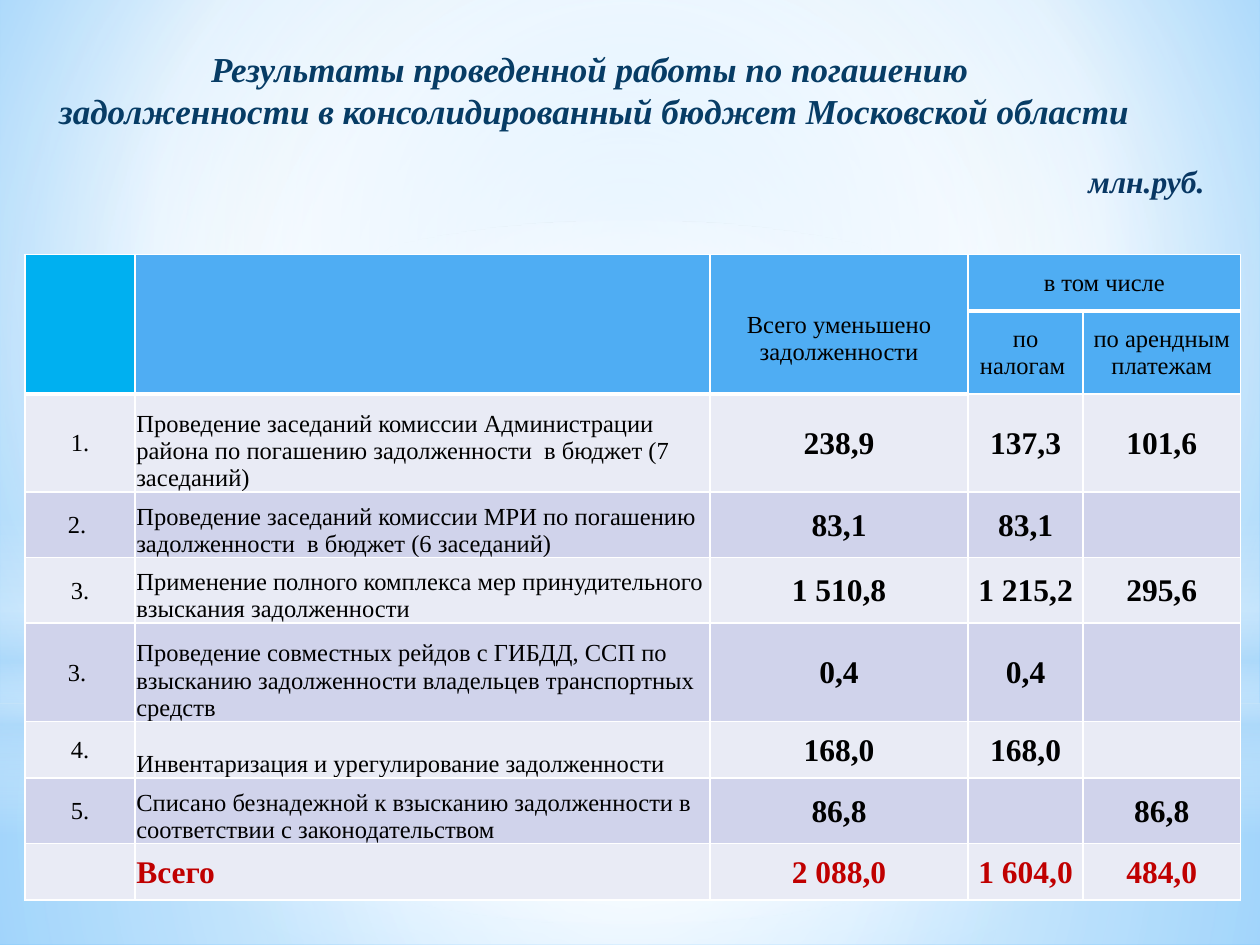
from lxml.etree import SubElement
from pptx import Presentation
from pptx.dml.color import RGBColor
from pptx.enum.shapes import MSO_SHAPE
from pptx.enum.text import MSO_ANCHOR, PP_ALIGN
from pptx.oxml.ns import qn
from pptx.util import Pt

COLORS = {
    "sky": "9ED5FF", "white": "FFFFFF", "blue": "5BB9FF", "haze": "B4DCFA",
    "corner": "00B0F0", "header": "4FADF3", "light": "E9EBF5", "dark": "D0D3EB",
    "black": "000000", "total": "C00000", "title": "073C65", "unit": "083763",
}
FONT = "Times New Roman"
SMALL = {"size": Pt(14), "bold": False}
LARGE = {"size": Pt(18), "bold": True}
COLUMN_WIDTHS = [62.8, 328.5, 147.6, 65.6, 90]
ROW_HEIGHTS = [32.4, 46.8, 56.2, 37.4, 37.4, 56.2, 32.4, 37.4, 32.4]
BODY_ROWS = [
    ["1.", "Проведение заседаний комиссии Администрации района по погашению "
     "задолженности  в бюджет (7 заседаний)", "238,9", "137,3", "101,6"],
    ["2. ", "Проведение заседаний комиссии МРИ по погашению "
     "задолженности  в бюджет (6 заседаний)", "83,1", "83,1", ""],
    ["3.", "Применение полного комплекса мер принудительного "
     "взыскания задолженности", "1 510,8", "1 215,2", "295,6"],
    ["3. ", "Проведение совместных рейдов с ГИБДД, ССП по взысканию "
     "задолженности владельцев транспортных средств", "0,4", "0,4", ""],
    ["4.", "Инвентаризация и урегулирование задолженности", "168,0", "168,0", ""],
    ["5.", "Списано безнадежной к взысканию задолженности в "
     "соответствии с законодательством", "86,8", "", "86,8"],
    ["", "Всего", "2 088,0", "1 604,0", "484,0"],
]


def color(name):
    return RGBColor.from_string(COLORS[name])


def paint_gradient(fill, element, stops, focus=None):
    """Circular gradient around focus, or a vertical one without it."""
    fill.gradient()
    gradient = next(element.iter(qn("a:gradFill")))
    for child in list(gradient):
        gradient.remove(child)
    stop_list = SubElement(gradient, qn("a:gsLst"))
    for position, name, opacity in stops:
        stop = SubElement(stop_list, qn("a:gs"), pos=str(position * 1000))
        tint = SubElement(stop, qn("a:srgbClr"), val=COLORS[name])
        if opacity < 100:
            SubElement(tint, qn("a:alpha"), val=str(opacity * 1000))
    if focus:
        circle = SubElement(gradient, qn("a:path"), path="circle")
        edges = {side: str(part * 1000) for side, part in zip("ltrb", focus)}
        SubElement(circle, qn("a:fillToRect"), **edges)
    else:
        SubElement(gradient, qn("a:lin"), ang="5400000", scaled="0")


def add_glow(page, kind, top, height, stops, focus=(50, 50, 50, 50)):
    glow = page.shapes.add_shape(kind, Pt(0), Pt(top), Pt(720), Pt(height))
    glow.shadow.inherit = False
    glow.line.fill.background()
    paint_gradient(glow.fill, glow._element, stops, focus)


def write_paragraph(para, text, color_name, font_format, align=PP_ALIGN.CENTER):
    para.alignment = align
    span = para.add_run()
    span.text = text
    span.font.color.rgb = color(color_name)
    for name, value in {"name": FONT, **font_format}.items():
        setattr(span.font, name, value)


def add_text(page, left, top, width, height, lines, color_name, size, align, wrap):
    box = page.shapes.add_textbox(Pt(left), Pt(top), Pt(width), Pt(height))
    frame = box.text_frame
    frame.word_wrap = wrap
    font_format = {"size": Pt(size), "bold": True, "italic": True}
    for index, line in enumerate(lines):
        para = frame.add_paragraph() if index else frame.paragraphs[0]
        write_paragraph(para, line, color_name, font_format, align)


def style_cell(cell, fill_name, bottom=1):
    """Margins, borders and fill of one cell."""
    margins = {"margin_left": 0.72, "margin_right": 0.72,
               "margin_top": 0.72, "margin_bottom": 0}
    for name, value in margins.items():
        setattr(cell, name, Pt(value))
    cell.vertical_anchor = MSO_ANCHOR.MIDDLE
    properties = cell._tc.get_or_add_tcPr()
    for side, width in {"L": 1, "R": 1, "T": 1, "B": bottom}.items():
        border = SubElement(properties, qn(f"a:ln{side}"), w=str(Pt(width)))
        paint = SubElement(border, qn("a:solidFill"))
        SubElement(paint, qn("a:srgbClr"), val=COLORS["white"])
    cell.fill.solid()
    cell.fill.fore_color.rgb = color(fill_name)


def fill_header(table):
    for row in range(2):
        for column in range(5):
            bottom = 1 if row == 1 and column > 2 else 3
            style_cell(table.cell(row, column), "header" if column else "corner", bottom)
    for column in range(3):
        table.cell(0, column).merge(table.cell(1, column))
    table.cell(0, 3).merge(table.cell(0, 4))
    labels = {(0, 2): "Всего уменьшено задолженности", (0, 3): "в том числе",
              (1, 3): "по налогам ", (1, 4): "по арендным платежам"}
    for place, label in labels.items():
        write_paragraph(table.cell(*place).text_frame.paragraphs[0], label, "black", SMALL)
    # The total label sits below the middle of its cell
    table.cell(0, 2).margin_top = Pt(16.3)


def fill_body(table):
    for index, texts in enumerate(BODY_ROWS):
        is_total = index == len(BODY_ROWS) - 1
        for column, text in enumerate(texts):
            cell = table.cell(index + 2, column)
            style_cell(cell, "dark" if index % 2 else "light")
            if column == 1 and not is_total:
                cell.vertical_anchor = MSO_ANCHOR.BOTTOM
            if text:
                write_paragraph(cell.text_frame.paragraphs[0], text,
                                "total" if is_total else "black",
                                LARGE if is_total or column > 1 else SMALL,
                                PP_ALIGN.LEFT if column == 1 else PP_ALIGN.CENTER)


def add_results_table(page):
    table = page.shapes.add_table(len(ROW_HEIGHTS), len(COLUMN_WIDTHS), Pt(14.4), Pt(145.4),
                                  Pt(sum(COLUMN_WIDTHS)), Pt(sum(ROW_HEIGHTS))).table
    table.first_row = table.horz_banding = False
    for column, width in zip(table.columns, COLUMN_WIDTHS):
        column.width = Pt(width)
    for row, height in zip(table.rows, ROW_HEIGHTS):
        row.height = Pt(height)
    fill_header(table)
    fill_body(table)


def add_backdrop(page):
    paint_gradient(page.background.fill, page._element,
                   [(0, "sky", 100), (60, "white", 100), (100, "blue", 100)],
                   (20, 10, 20, 60))
    add_glow(page, MSO_SHAPE.RECTANGLE, 401.8, 138.2,
             [(0, "white", 91), (37, "white", 76), (100, "haze", 79)])
    add_glow(page, MSO_SHAPE.RECTANGLE, 0, 401.8,
             [(0, "white", 89), (48, "white", 62), (100, "haze", 79)])
    add_glow(page, MSO_SHAPE.RECTANGLE, 296.6, 180,
             [(0, "white", 0), (29, "white", 30), (45, "haze", 40),
              (55, "white", 26), (65, "haze", 60), (100, "white", 0)], None)
    add_glow(page, MSO_SHAPE.OVAL, 126, 401.8, [(0, "white", 100), (56, "white", 0)])


def main():
    deck = Presentation()
    deck.slide_width, deck.slide_height = Pt(720), Pt(540)
    page = deck.slides.add_slide(deck.slide_layouts[6])
    # Soft sky background
    add_backdrop(page)
    # Table of results
    add_results_table(page)
    # Unit and title
    add_text(page, 614.9, 89.3, 99.4, 30.2, ["млн.руб."], "unit", 18, PP_ALIGN.LEFT, True)
    add_text(page, 24.5, 23.8, 630, 55.4,
             ["Результаты проведенной работы по погашению ",
              "задолженности в консолидированный бюджет Московской области"],
             "title", 20, PP_ALIGN.CENTER, False)
    deck.save("out.pptx")


if __name__ == "__main__":
    main()
